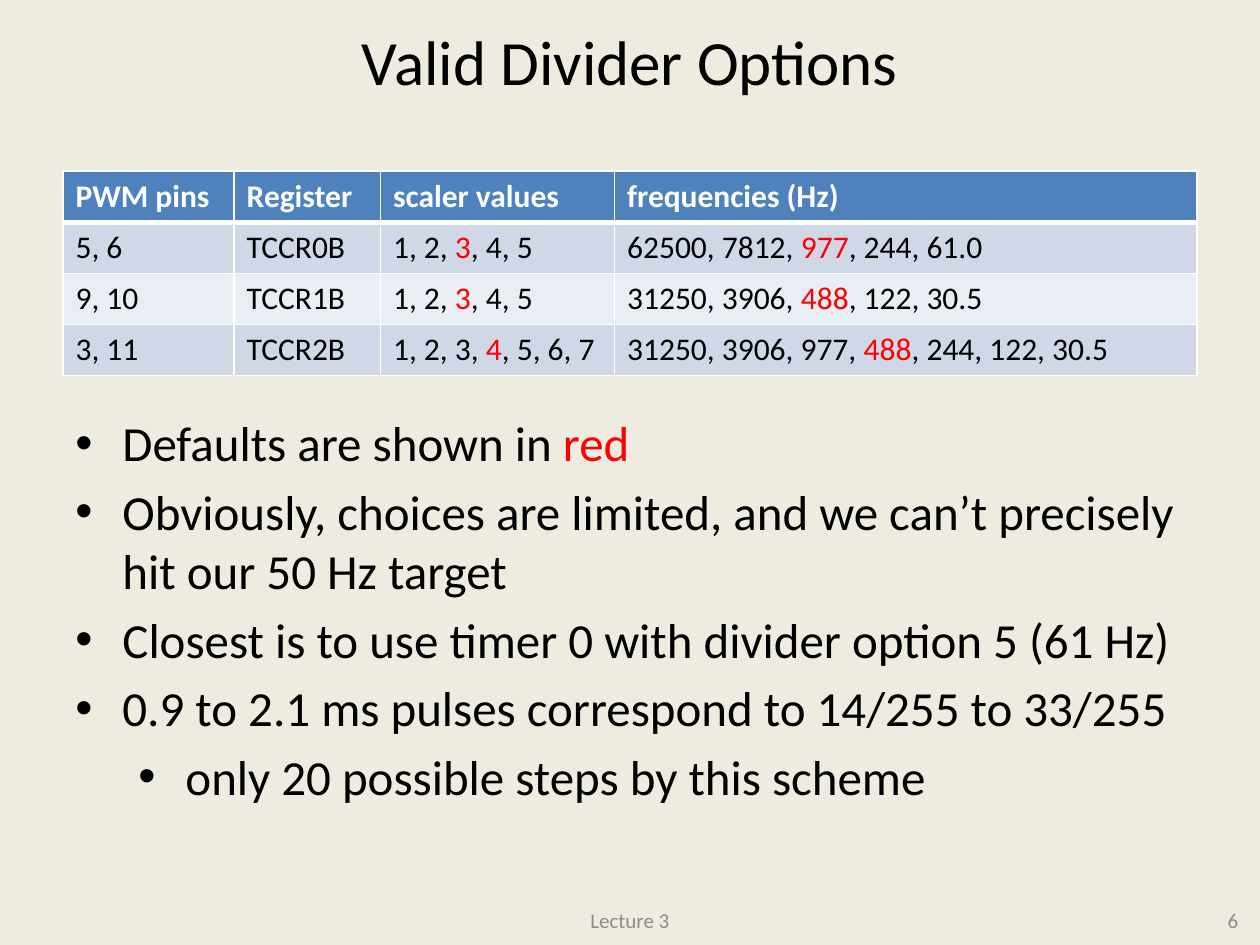
import lxml.etree
import pptx
import pptx.dml.color
import pptx.enum.text
import pptx.oxml.ns
import pptx.util

Cm = pptx.util.Cm
ALIGN = pptx.enum.text.PP_ALIGN
ANCHOR = pptx.enum.text.MSO_ANCHOR
qn = pptx.oxml.ns.qn

BLACK, WHITE, RED, GREY = "000000", "FFFFFF", "FF0000", "8C8C8C"
HEADER_FILL, BAND_FILLS = "4F81BD", ("D0D8E8", "E9EDF4")

COLUMN_WIDTHS = (3.45, 2.95, 4.72, 11.74)
DIVIDERS = (
    ("PWM pins", "Register", "scaler values", "frequencies (Hz)"),
    ("5, 6", "TCCR0B", "1, 2, *3*, 4, 5", "62500, 7812, *977*, 244, 61.0"),
    ("9, 10", "TCCR1B", "1, 2, *3*, 4, 5", "31250, 3906, *488*, 122, 30.5"),
    ("3, 11", "TCCR2B", "1, 2, 3, *4*, 5, 6, 7",
     "31250, 3906, 977, *488*, 244, 122, 30.5"),
)
BULLETS = (
    (0, "Defaults are shown in *red*"),
    (0, "Obviously, choices are limited, and we can’t precisely hit our 50 Hz target"),
    (0, "Closest is to use timer 0 with divider option 5 (61 Hz)"),
    (0, "0.9 to 2.1 ms pulses correspond to 14/255 to 33/255"),
    (1, "only 20 possible steps by this scheme"),
)


def rgb(color):
    return pptx.dml.color.RGBColor.from_string(color)


def write(p, text, size, color=BLACK, bold=False):
    """Fill a paragraph; parts between asterisks become red."""
    for i, part in enumerate(text.split("*")):
        if part:
            r = p.add_run()
            r.text = part
            r.font.name = "Calibri"
            r.font.size = pptx.util.Pt(size)
            r.font.bold = bold
            r.font.color.rgb = rgb(RED if i % 2 else color)


def add_text_frame(s, box, anchor):
    tf = s.shapes.add_textbox(*map(Cm, box)).text_frame
    tf.word_wrap = True
    tf.vertical_anchor = anchor
    return tf


def add_line(s, box, text, size, color, align):
    p = add_text_frame(s, box, ANCHOR.MIDDLE).paragraphs[0]
    p.alignment = align
    write(p, text, size, color)


def set_borders(cell, widths):
    tcPr = cell._tc.get_or_add_tcPr()
    for side, width in zip("LRTB", widths):
        ln = lxml.etree.SubElement(tcPr, qn(f"a:ln{side}"),
                                   w=str(pptx.util.Pt(width)))
        fill = lxml.etree.SubElement(ln, qn("a:solidFill"))
        lxml.etree.SubElement(fill, qn("a:srgbClr"), val=WHITE)


def add_divider_table(s, box):
    table = s.shapes.add_table(len(DIVIDERS), len(COLUMN_WIDTHS),
                               *map(Cm, box)).table
    for column, width in zip(table.columns, COLUMN_WIDTHS):
        column.width = Cm(width)
    for i, row in enumerate(DIVIDERS):
        header = i == 0
        for j, text in enumerate(row):
            cell = table.cell(i, j)
            set_borders(cell, (1, 1, 3 if i == 1 else 1, 3 if header else 1))
            cell.fill.solid()
            cell.fill.fore_color.rgb = rgb(
                HEADER_FILL if header else BAND_FILLS[(i - 1) % 2])
            write(cell.text_frame.paragraphs[0], text, 18,
                  WHITE if header else BLACK, header)


def set_bullet(p, level):
    hanging = Cm(0.95)
    pPr = p._p.get_or_add_pPr()
    pPr.set("marL", str(hanging + level * Cm(1.27)))
    pPr.set("indent", str(-hanging))
    before = lxml.etree.SubElement(pPr, qn("a:spcBef"))
    lxml.etree.SubElement(before, qn("a:spcPct"), val="20000")
    lxml.etree.SubElement(pPr, qn("a:buFont"), typeface="Arial")
    lxml.etree.SubElement(pPr, qn("a:buChar"), char="•")


def add_bullets(s, box):
    tf = add_text_frame(s, box, ANCHOR.TOP)
    for i, (level, text) in enumerate(BULLETS):
        p = tf.add_paragraph() if i else tf.paragraphs[0]
        p.level = level
        set_bullet(p, level)
        write(p, text, 28)


def main():
    prs = pptx.Presentation()
    prs.slide_width, prs.slide_height = Cm(25.4), Cm(19.05)
    s = prs.slides.add_slide(prs.slide_layouts[6])
    s.background.fill.solid()
    s.background.fill.fore_color.rgb = rgb("EEECE1")

    left, width = 1.27, 22.86
    add_line(s, (left, 0.2, width, 2.03), "Valid Divider Options", 36, BLACK,
             ALIGN.CENTER)
    add_divider_table(s, (left, 3.45, width, 4.12))
    add_bullets(s, (left, 8.2, width, 9.83))
    add_line(s, (8.68, 18.03, 8.04, 1.02), "Lecture 3", 12, GREY, ALIGN.CENTER)
    add_line(s, (19.28, 18.03, 5.93, 1.02), "6", 12, GREY, ALIGN.RIGHT)
    prs.save("out.pptx")


if __name__ == "__main__":
    main()
